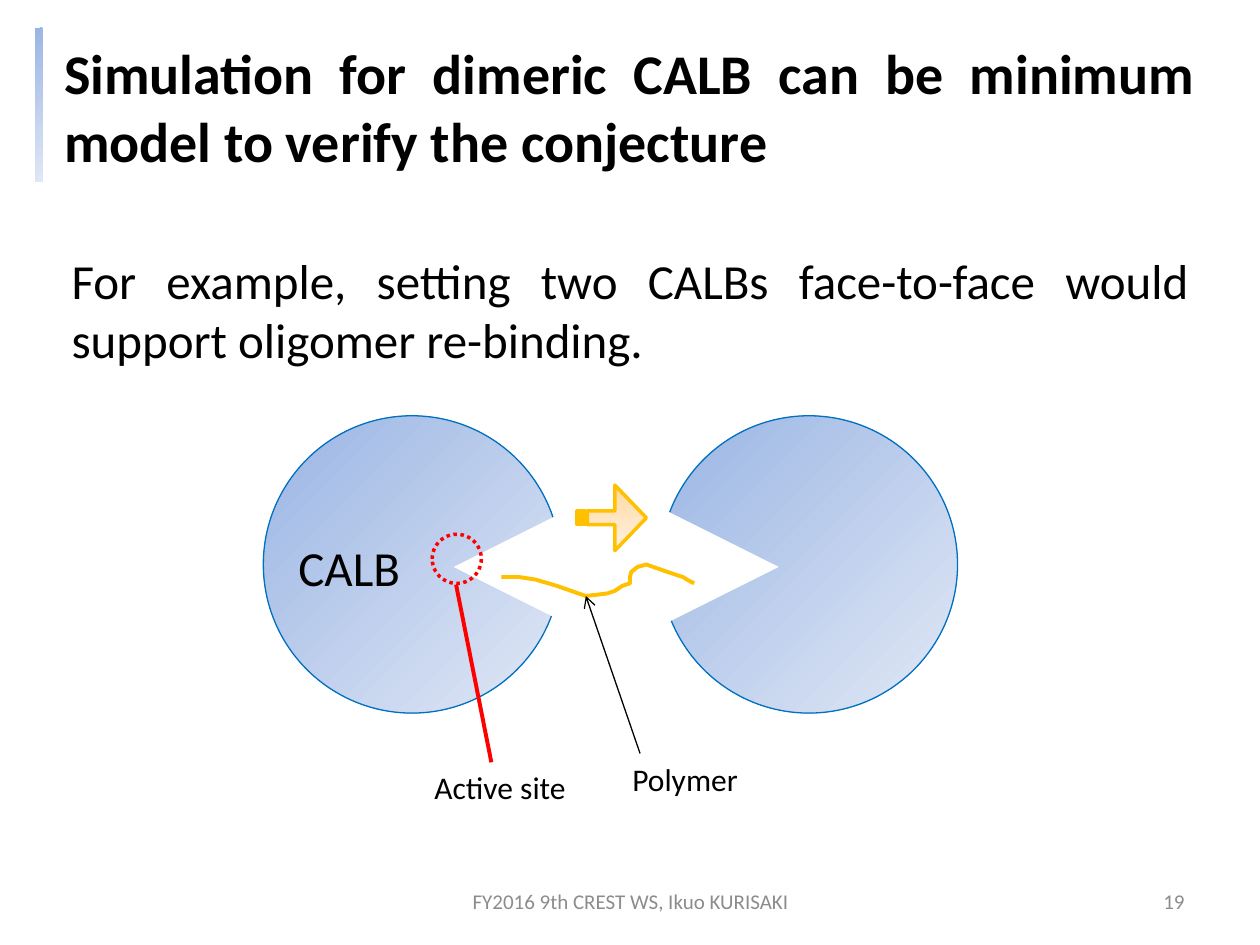
from lxml import etree
from pptx import Presentation
from pptx.dml.color import RGBColor as RGB
from pptx.enum.dml import MSO_LINE as Dash
from pptx.enum.shapes import MSO_CONNECTOR as Conn, MSO_SHAPE as Shape
from pptx.enum.text import MSO_ANCHOR as Anchor, PP_ALIGN as Align
from pptx.oxml.ns import qn
from pptx.util import Inches, Pt

BLACK, WHITE, GREY = RGB(0, 0, 0), RGB(255, 255, 255), RGB(0x8C, 0x8C, 0x8C)
BLUE, RED, GOLD = RGB(0, 0x70, 0xC0), RGB(255, 0, 0), RGB(255, 0xC0, 0)
BLUES = RGB(0x9A, 0xB5, 0xE4), RGB(0xE1, 0xE8, 0xF5)
GOLDS = RGB(0xFF, 0xD8, 0xA0), RGB(0xFF, 0xF2, 0xE3)


def add_text(slide, box, text, size, color=BLACK, bold=False,
             align=Align.LEFT, anchor=Anchor.TOP, wrap=True):
    frame = slide.shapes.add_textbox(*map(Inches, box)).text_frame
    frame.word_wrap = wrap
    frame.vertical_anchor = anchor
    para = frame.paragraphs[0]
    para.text = text
    para.alignment = align
    font = para.font
    font.name, font.size, font.bold = "Calibri", Pt(size), bold
    font.color.rgb = color


def set_line(line, color, width):
    line.color.rgb = color
    line.width = Pt(width)


def add_form(slide, kind, box, fill=None, angle=45, line=None, width=1):
    """Add a preset shape; fill is None, one colour or a gradient pair."""
    form = slide.shapes.add_shape(kind, *map(Inches, box))
    form.shadow.inherit = False
    if fill is None:
        form.fill.background()
    elif isinstance(fill, RGB):
        form.fill.solid()
        form.fill.fore_color.rgb = fill
    else:
        form.fill.gradient()
        form.fill.gradient_angle = 360 - angle
        for stop, color in zip(form.fill.gradient_stops, fill):
            stop.color.rgb = color
    if line is None:
        form.line.fill.background()
    else:
        set_line(form.line, line, width)
    return form


def add_line(slide, start, end, color, width, arrow=False):
    line = slide.shapes.add_connector(
        Conn.STRAIGHT, *map(Inches, (*start, *end)))
    set_line(line.line, color, width)
    props = line._element.spPr
    etree.SubElement(props, qn("a:effectLst"))
    if arrow:
        etree.SubElement(props.find(qn("a:ln")), qn("a:tailEnd"), type="arrow")


def add_title(slide, left, top):
    add_form(slide, Shape.RECTANGLE, (left, top, 0.06, 1.22), BLUES)
    add_text(slide, (left + 0.13, top + 0.04, 9.18, 1.18),
             "Simulation for dimeric CALB can be minimum model "
             "to verify the conjecture", 32, bold=True, align=Align.JUSTIFY)


def add_enzyme(slide, left, top, notch, turn):
    """Draw a disc with a wedge cut out, the wedge's box starting at notch."""
    add_form(slide, Shape.OVAL, (left, top, 2.36, 2.36), BLUES,
             line=BLUE, width=0.75)
    wedge = add_form(slide, Shape.ISOSCELES_TRIANGLE,
                     (left + notch, top + 0.7, 1, 1), WHITE)
    wedge.rotation = turn


def add_site(slide, left, top):
    add_line(slide, (left + 0.47, top + 1.81), (left + 0.19, top + 0.4),
             RED, 2.25)
    ring = add_form(slide, Shape.OVAL, (left, top, 0.39, 0.39),
                    line=RED, width=2)
    ring.line.dash_style = Dash.ROUND_DOT
    add_text(slide, (left - 0.08, top + 1.81, 1.26, 0.4), "Active site", 18,
             wrap=False)


def add_polymer(slide, left, top):
    bends = [(0, 0.1), (0.14, 0.1), (0.27, 0.12), (0.44, 0.17), (0.67, 0.25),
             (0.76, 0.24), (0.84, 0.23), (0.9, 0.21), (0.96, 0.17),
             (1.02, 0.15), (1.02, 0.1), (1.03, 0.06), (1.08, 0.02), (1.15, 0),
             (1.32, 0.06), (1.44, 0.1), (1.49, 0.13), (1.53, 0.15)]
    points = [(Inches(left + x), Inches(top + y)) for x, y in bends]
    pen = slide.shapes.build_freeform(*points[0])
    pen.add_line_segments(points[1:], close=False)
    chain = pen.convert_to_shape()
    chain.shadow.inherit = False
    chain.fill.background()
    set_line(chain.line, GOLD, 2.25)
    add_line(slide, (left + 1.1, top + 1.5), (left + 0.67, top + 0.25),
             BLACK, 0.75, arrow=True)
    add_text(slide, (left + 0.94, top + 1.5, 1.05, 0.4), "Polymer", 18,
             wrap=False)


def add_arrow(slide, box):
    arrow = add_form(slide, Shape.STRIPED_RIGHT_ARROW, box, GOLDS, 90, GOLD, 2)
    arrow.adjustments[0], arrow.adjustments[1] = 0.21, 0.48


def add_model(slide, left, top):
    add_enzyme(slide, left, top, 1.51, 270)
    add_enzyme(slide, left + 3.15, top, -0.06, 90)
    add_text(slide, (left + 0.18, top + 0.92, 1.02, 0.57), "CALB", 28,
             wrap=False)
    add_site(slide, left + 1.34, top + 0.94)
    add_polymer(slide, left + 1.89, top + 1.18)
    add_arrow(slide, (left + 2.49, top + 0.55, 0.55, 0.52))


def add_footer(slide, top):
    for left, width, text, align in (
            (3.42, 3.17, "FY2016 9th CREST WS, Ikuo KURISAKI", Align.CENTER),
            (7.17, 2.33, "19", Align.RIGHT)):
        add_text(slide, (left, top, width, 0.4), text, 12, GREY,
                 align=align, anchor=Anchor.MIDDLE)


def main():
    deck = Presentation()
    deck.slide_width, deck.slide_height = Inches(10), Inches(7.5)
    slide = deck.slides.add_slide(deck.slide_layouts[6])
    add_title(slide, 0.28, 0.22)
    add_text(slide, (0.47, 1.94, 9.06, 1.04),
             "For example, setting two CALBs face-to-face would support "
             "oligomer re-binding.", 28, align=Align.JUSTIFY)
    add_model(slide, 2.09, 3.3)
    add_footer(slide, 6.95)
    deck.save("out.pptx")


if __name__ == "__main__":
    main()
